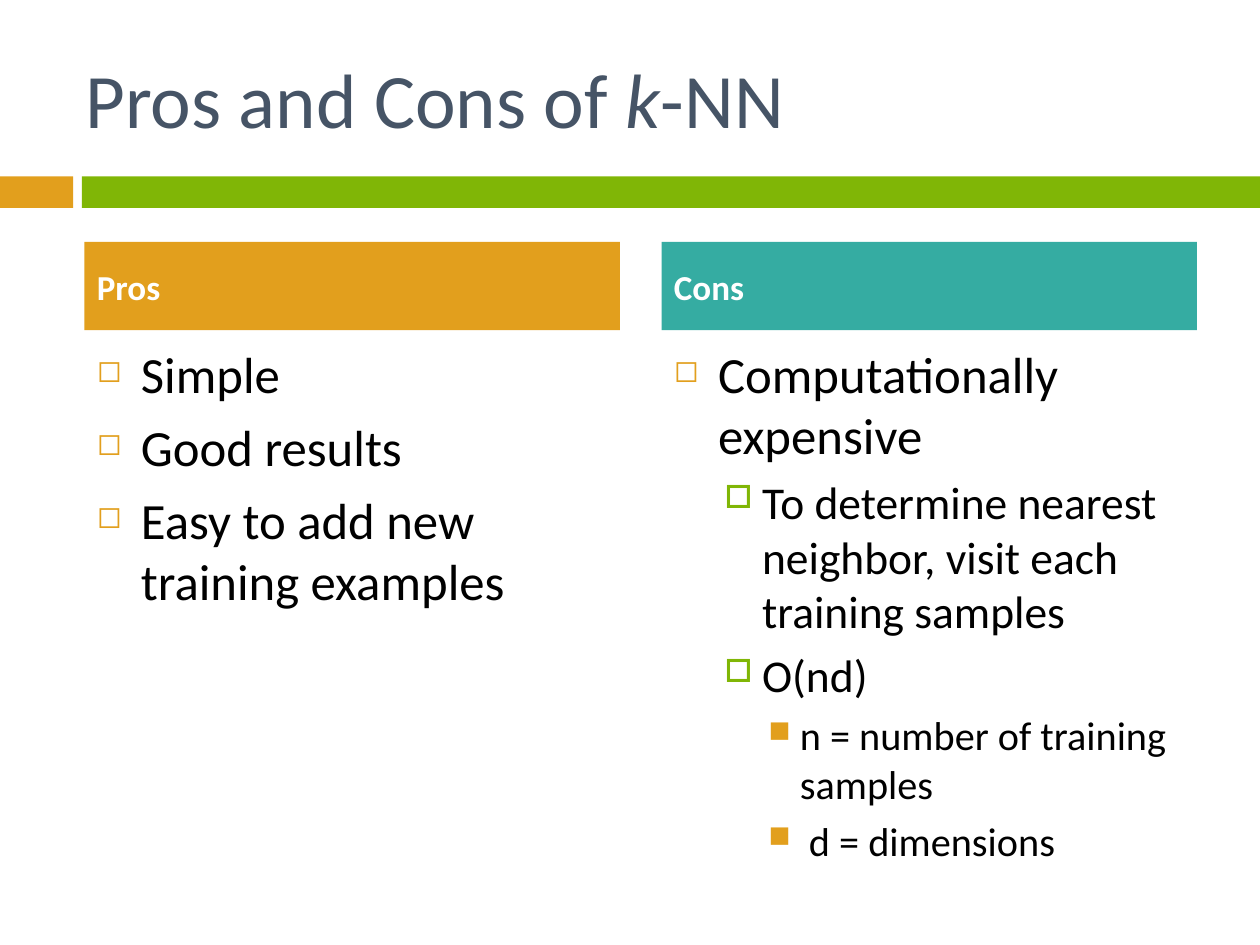
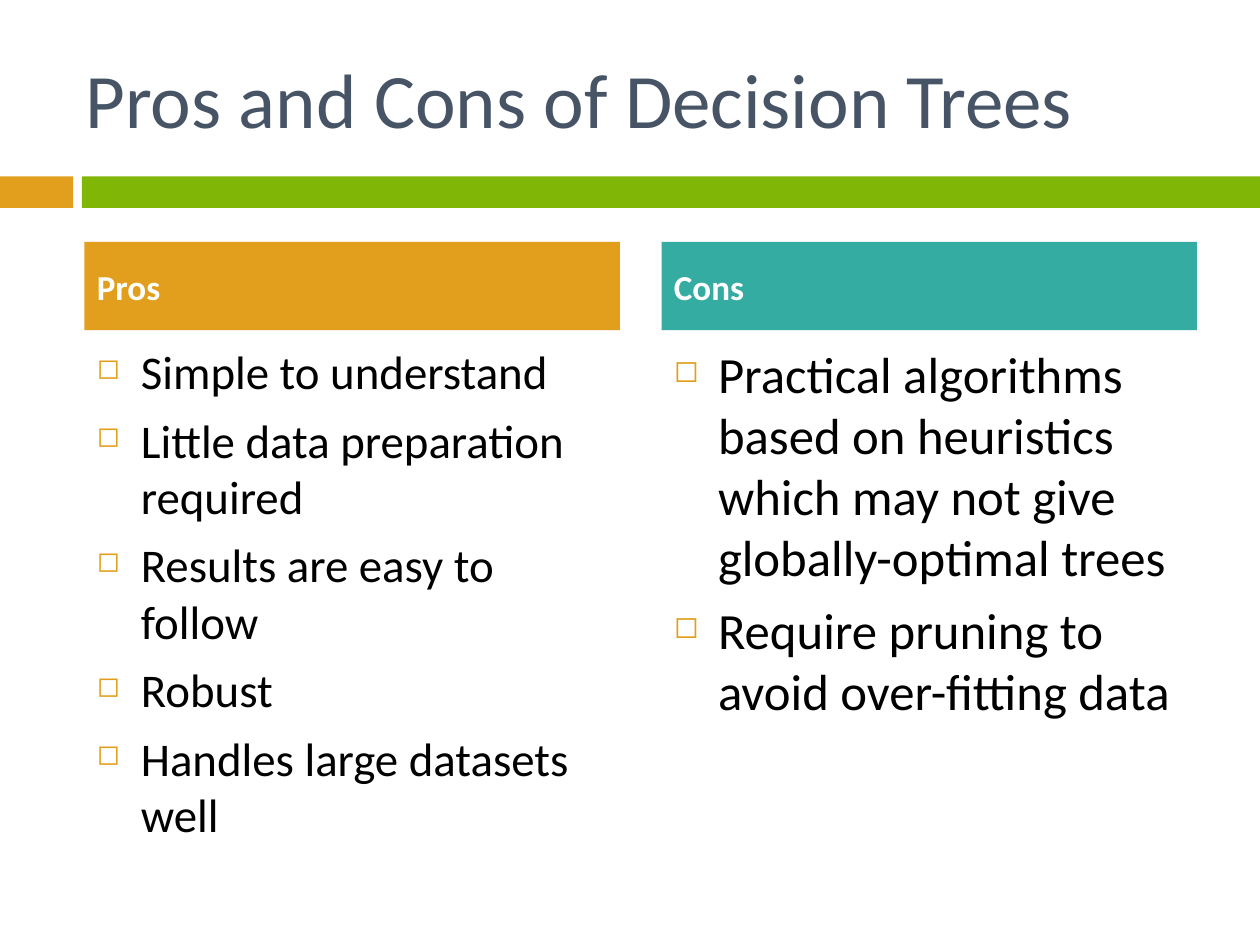
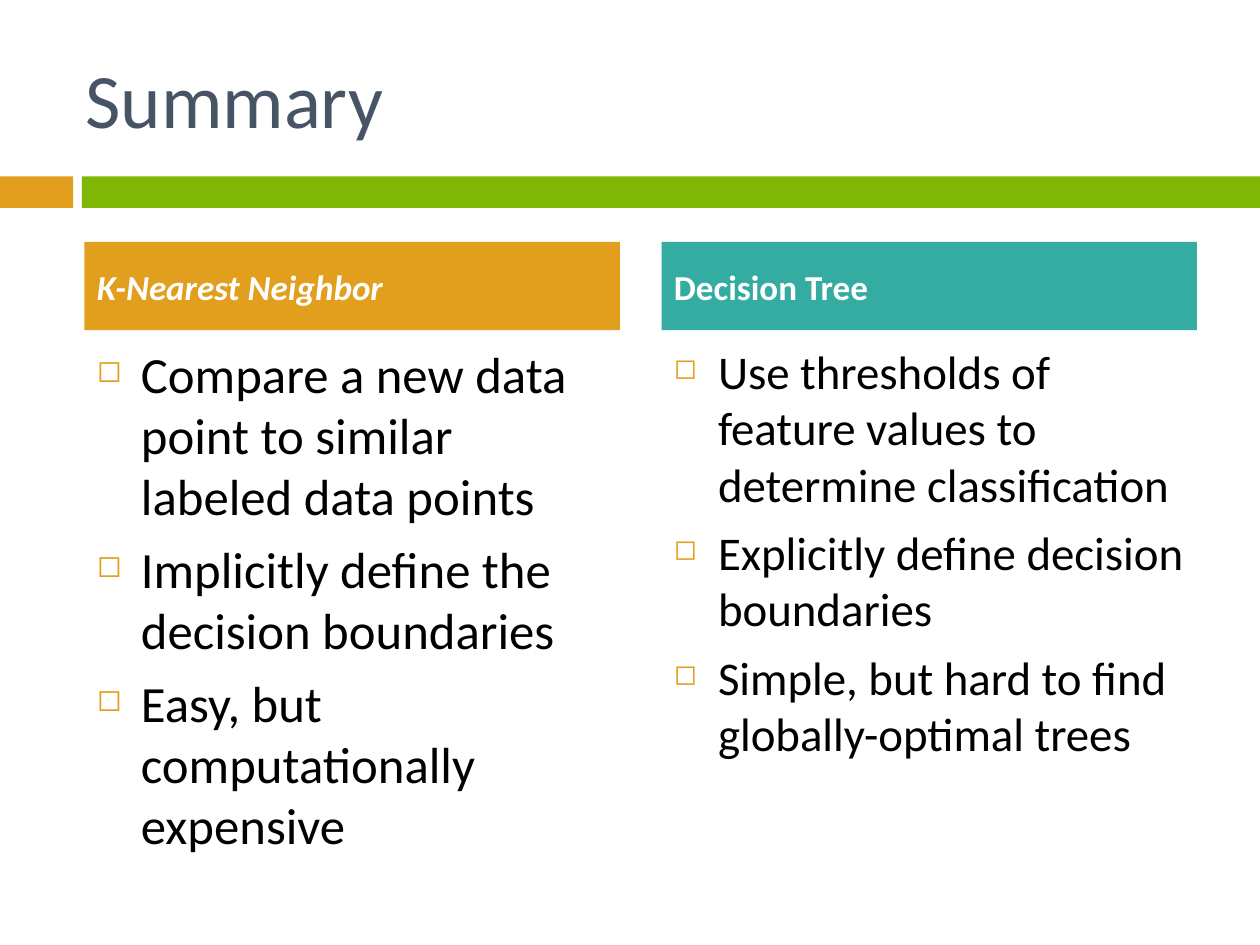
"""Build three slides comparing k-NN and decision trees."""
from lxml import etree
from pptx import Presentation
from pptx.dml.color import RGBColor
from pptx.enum.shapes import MSO_SHAPE
from pptx.enum.text import MSO_ANCHOR, PP_ALIGN
from pptx.oxml.ns import qn
from pptx.util import Inches, Pt

RECTANGLE = MSO_SHAPE.RECTANGLE
MIDDLE = MSO_ANCHOR.MIDDLE
LEFT = PP_ALIGN.LEFT

COLORS = {
    "title": "465466",
    "text": "000000",
    "white": "FFFFFF",
    "orange": "E29F1D",
    "green": "80B606",
    "teal": "35ACA2",
}
FONT = "Calibri"
COLUMN_LEFTS = (0.67, 5.25)
COLUMN_WIDTH = 4.25
HEADER_COLORS = ("orange", "teal")
LEVELS = (
    {"size": 29, "margin": 0.35, "hanging": 0.35, "before": 7,
     "bullet": "◻", "color": "orange", "percent": 60},
    {"size": 26, "margin": 0.7, "hanging": 0.3, "before": 5.5,
     "bullet": "□", "color": "green", "percent": 70},
    {"size": 23, "margin": 1, "hanging": 0.25, "before": 5,
     "bullet": "■", "color": "orange", "percent": 75},
)
COMPACT_SIZE = 26.8


class Deck:
    """Hold the shared style and the current slide."""

    def __init__(self):
        self.presentation = Presentation()
        self.presentation.slide_width = Inches(10)
        self.presentation.slide_height = Inches(7.5)
        self.slide = None

    def add_slide(self, title_runs):
        layout = self.presentation.slide_layouts[6]
        self.slide = self.presentation.slides.add_slide(layout)
        self.rectangle(0, 1.4, 0.58, 0.25, "orange")
        self.rectangle(0.65, 1.4, 9.35, 0.25, "green")
        self.title(title_runs)

    def rectangle(self, left, top, width, height, color):
        shape = self.slide.shapes.add_shape(
            RECTANGLE, Inches(left), Inches(top), Inches(width), Inches(height))
        shape.shadow.inherit = False
        shape.fill.solid()
        shape.fill.fore_color.rgb = RGBColor.from_string(COLORS[color])
        shape.line.fill.background()
        return shape

    def text_frame(self, left, top, width, height):
        shape = self.slide.shapes.add_textbox(
            Inches(left), Inches(top), Inches(width), Inches(height))
        shape.text_frame.word_wrap = True
        return shape.text_frame

    def set_font(self, paragraph, size, color):
        paragraph.font.name = FONT
        paragraph.font.size = Pt(size)
        paragraph.font.color.rgb = RGBColor.from_string(COLORS[color])

    def title(self, runs):
        frame = self.text_frame(0.58, 0.3, 8.92, 0.95)
        frame.vertical_anchor = MIDDLE
        paragraph = frame.paragraphs[0]
        self.set_font(paragraph, 44, "title")
        for text, italic in runs:
            run = paragraph.add_run()
            run.text = text
            if italic:
                run.font.italic = True

    def header(self, left, text, color, italic=False):
        frame = self.rectangle(left, 1.92, COLUMN_WIDTH, 0.7, color).text_frame
        frame.vertical_anchor = MIDDLE
        paragraph = frame.paragraphs[0]
        paragraph.text = text
        paragraph.alignment = LEFT
        paragraph.space_before = Pt(7)
        self.set_font(paragraph, 20, "white")
        paragraph.font.bold = True
        paragraph.font.italic = italic

    def bullet(self, paragraph, style):
        properties = paragraph._p.get_or_add_pPr()
        properties.set("marL", str(Inches(style["margin"])))
        properties.set("indent", str(-Inches(style["hanging"])))
        color = etree.SubElement(properties, qn("a:buClr"))
        etree.SubElement(color, qn("a:srgbClr"), val=COLORS[style["color"]])
        etree.SubElement(properties, qn("a:buSzPct"), val=str(style["percent"] * 1000))
        etree.SubElement(properties, qn("a:buChar"), char=style["bullet"])

    def bullet_list(self, left, items, size=None):
        frame = self.text_frame(left, 2.67, COLUMN_WIDTH, 3.92)
        for index, (level, text) in enumerate(items):
            paragraph = frame.add_paragraph() if index else frame.paragraphs[0]
            style = LEVELS[level]
            paragraph.text = text
            paragraph.level = level
            paragraph.space_before = Pt(style["before"])
            self.bullet(paragraph, style)
            self.set_font(paragraph, size or style["size"], "text")

    def comparison(self, title_runs, columns):
        self.add_slide(title_runs)
        for left, color, column in zip(COLUMN_LEFTS, HEADER_COLORS, columns):
            self.bullet_list(left, column["items"], column.get("size"))
            self.header(left, column["header"], color, column.get("italic", False))


def top_level(*texts):
    """Give every text the first bullet level."""
    return [(0, text) for text in texts]


def main():
    """Create the slides and save them."""
    deck = Deck()
    deck.comparison(
        [("Pros and Cons of ", False), ("k", True), ("-NN", False)],
        [
            {"header": "Pros", "items": top_level(
                "Simple", "Good results", "Easy to add new training examples")},
            {"header": "Cons", "items": [
                (0, "Computationally expensive"),
                (1, "To determine nearest neighbor, visit each training samples"),
                (1, "O(nd)"),
                (2, "n = number of training samples"),
                (2, " d = dimensions"),
            ]},
        ])
    deck.comparison(
        [("Pros and Cons of Decision Trees", False)],
        [
            {"header": "Pros", "size": COMPACT_SIZE, "items": top_level(
                "Simple to understand",
                "Little data preparation required",
                "Results are easy to follow",
                "Robust",
                "Handles large datasets well")},
            {"header": "Cons", "items": top_level(
                "Practical algorithms based on heuristics which may not give "
                "globally-optimal trees",
                "Require pruning to avoid over-fitting data")},
        ])
    deck.comparison(
        [("Summary", False)],
        [
            {"header": "K-Nearest Neighbor", "italic": True, "items": top_level(
                "Compare a new data point to similar labeled data points",
                "Implicitly define the decision boundaries",
                "Easy, but computationally expensive")},
            {"header": "Decision Tree", "size": COMPACT_SIZE, "items": top_level(
                "Use thresholds of feature values to determine classification",
                "Explicitly define decision boundaries",
                "Simple, but hard to find globally-optimal trees")},
        ])
    deck.presentation.save("out.pptx")


if __name__ == "__main__":
    main()
